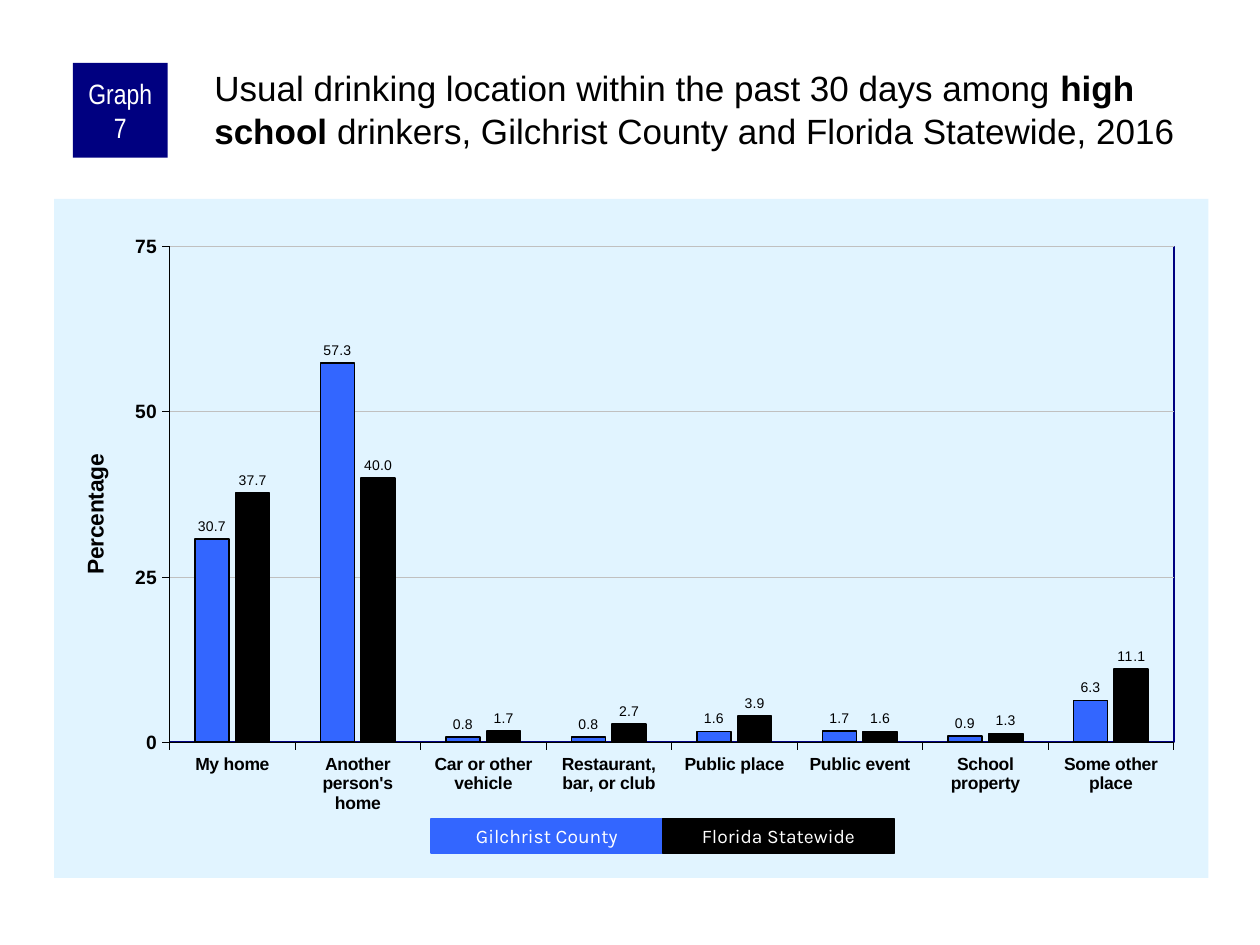
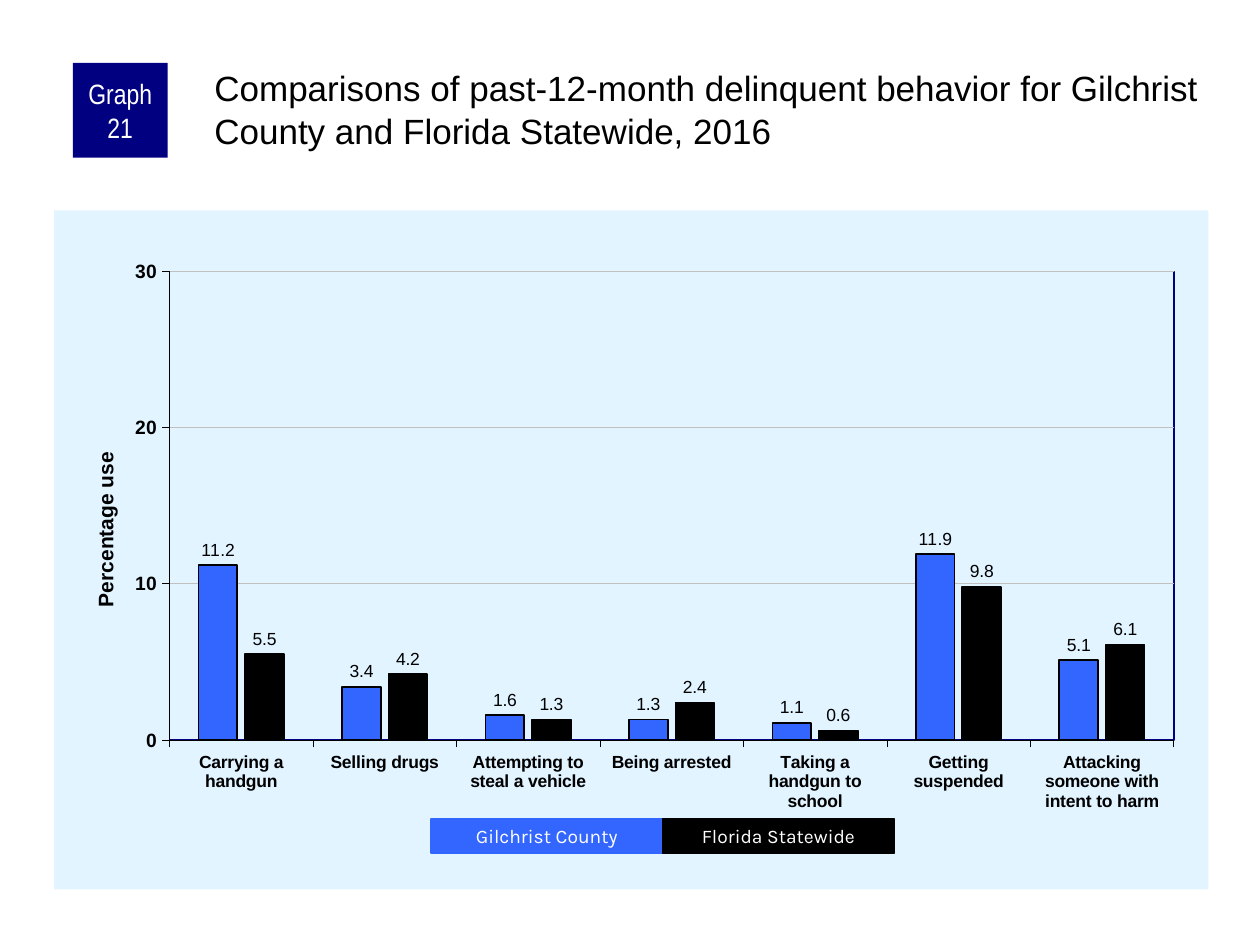
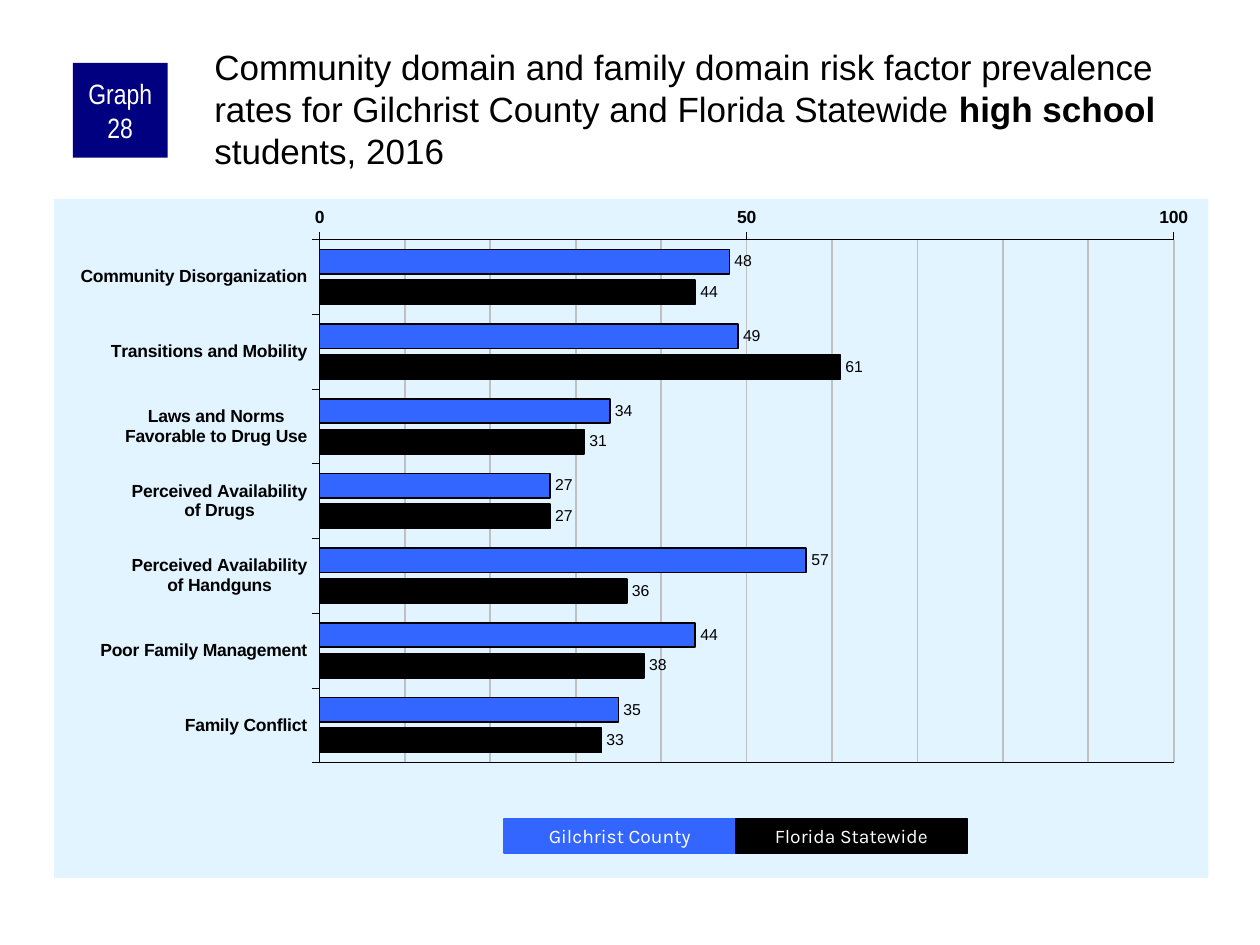
from copy import deepcopy

from pptx import Presentation
from pptx.chart.data import CategoryChartData
from pptx.dml.color import RGBColor
from pptx.enum.chart import (XL_AXIS_CROSSES, XL_CHART_TYPE, XL_LABEL_POSITION,
                             XL_TICK_MARK)
from pptx.enum.shapes import MSO_SHAPE
from pptx.enum.text import MSO_ANCHOR, MSO_AUTO_SIZE, PP_ALIGN
from pptx.oxml import parse_xml
from pptx.oxml.ns import nsdecls
from pptx.util import Cm, Pt

# Shared look
COLORS = {
    "text": "000000",
    "white": "FFFFFF",
    "badge": "000080",
    "panel": "E1F4FF",
    "county": "3366FF",
    "state": "000000",
    "grid": "C0C0C0",
}
REGIONS = [("Gilchrist County", "county"), ("Florida Statewide", "state")]
LEGEND_WIDTH = 4.67

# Content of each slide
GRAPHS = [
    {
        "number": 7,
        "title": [("Usual drinking location within the past 30 days among ", False),
                  ("high school", True),
                  (" drinkers, Gilchrist County and Florida Statewide, 2016", False)],
        "title_top": 1.27, "chart_top": 4.01, "legend_left": 8.69,
        "type": XL_CHART_TYPE.COLUMN_CLUSTERED,
        "categories": ["My home", "Another person's home", "Car or other vehicle",
                       "Restaurant, bar, or club", "Public place", "Public event",
                       "School property", "Some other place"],
        "values": [(30.7, 57.3, 0.8, 0.8, 1.6, 1.7, 0.9, 6.3),
                   (37.7, 40, 1.7, 2.7, 3.9, 1.6, 1.3, 11.1)],
        "maximum": 75, "step": 25, "axis_size": 11, "grid_width": 0.25,
        "axis_title": ("Percentage", 13, 0.02, 0.37),
        "label_format": "0.0", "label_size": 8, "gap": 150, "overlap": -20,
        "plot": (0.1, 0.07, 0.87, 0.73), "frame": ("badge", 1),
    },
    {
        "number": 21,
        "title": [("Comparisons of past-12-month delinquent behavior for Gilchrist "
                   "County and Florida Statewide, 2016", False)],
        "title_top": 1.27, "chart_top": 4.24, "legend_left": 8.69,
        "type": XL_CHART_TYPE.COLUMN_CLUSTERED,
        "categories": ["Carrying a handgun", "Selling drugs",
                       "Attempting to steal a vehicle", "Being arrested",
                       "Taking a handgun to school", "Getting suspended",
                       "Attacking someone with intent to harm"],
        "values": [(11.2, 3.4, 1.6, 1.3, 1.1, 11.9, 5.1),
                   (5.5, 4.2, 1.3, 2.4, 0.6, 9.8, 6.1)],
        "maximum": 30, "step": 10, "axis_size": 11, "grid_width": 0.25,
        "axis_title": ("Percentage use", 12, 0.03, 0.35),
        "label_format": "0.0", "label_size": 10, "gap": 150, "overlap": -20,
        "plot": (0.1, 0.09, 0.87, 0.69), "frame": ("badge", 1),
    },
    {
        "number": 28,
        "title": [("Community domain and family domain risk factor prevalence rates "
                   "for Gilchrist County and Florida Statewide ", False),
                  ("high school", True),
                  (" students, 2016", False)],
        "title_top": 0.84, "chart_top": 4.01, "legend_left": 10.16,
        "type": XL_CHART_TYPE.BAR_CLUSTERED,
        "categories": ["Community Disorganization", "Transitions and Mobility",
                       "Laws and Norms\nFavorable to Drug Use",
                       "Perceived Availability\nof Drugs",
                       "Perceived Availability\nof Handguns",
                       "Poor Family Management", "Family Conflict"],
        "values": [(48, 49, 34, 27, 57, 44, 35),
                   (44, 61, 31, 27, 36, 38, 33)],
        "maximum": 100, "step": 50, "minor_step": 10, "axis_size": 10, "grid_width": 1,
        "axis_title": None,
        "label_format": "0", "label_size": 9, "gap": 80, "overlap": -25,
        "plot": (0.23, 0.06, 0.74, 0.77), "frame": ("text", 0.25),
    },
]


def style_font(font, name, size, color, bold=False):
    font.name = name
    font.size = Pt(size)
    font.bold = bold
    font.color.rgb = RGBColor.from_string(COLORS[color])


def manual_layout(x, y, size=None):
    target = '<c:layoutTarget val="inner"/>' if size else ""
    extent = f'<c:w val="{size[0]}"/><c:h val="{size[1]}"/>' if size else ""
    return parse_xml(
        f'<c:layout {nsdecls("c")}><c:manualLayout>{target}'
        f'<c:xMode val="edge"/><c:yMode val="edge"/>'
        f'<c:x val="{x}"/><c:y val="{y}"/>{extent}</c:manualLayout></c:layout>')


presentation = Presentation()
presentation.slide_width = Cm(25.4)
presentation.slide_height = Cm(19.05)

for graph in GRAPHS:
    slide = presentation.slides.add_slide(presentation.slide_layouts[5])

    # Title
    title = slide.shapes.title
    title.left, title.top = Cm(4.24), Cm(graph["title_top"])
    title.width, title.height = Cm(20.12), Cm(2.11)
    text_frame = title.text_frame
    text_frame.auto_size = MSO_AUTO_SIZE.NONE
    text_frame.word_wrap = True
    text_frame.vertical_anchor = MSO_ANCHOR.TOP
    text_frame.margin_left = text_frame.margin_top = Cm(0.08)
    text_frame.margin_right = text_frame.margin_bottom = 0
    paragraph = text_frame.paragraphs[0]
    paragraph.alignment = PP_ALIGN.LEFT
    paragraph.line_spacing = Pt(24)
    for text, bold in graph["title"]:
        run = paragraph.add_run()
        run.text = text
        style_font(run.font, "Arial", 20, "text", bold)

    # Chart
    chart_data = CategoryChartData()
    chart_data.categories = graph["categories"]
    for (region, color), values in zip(REGIONS, graph["values"]):
        chart_data.add_series(region, values)
    chart = slide.shapes.add_chart(
        graph["type"], Cm(1.09), Cm(graph["chart_top"]), Cm(23.27), Cm(13.69),
        chart_data).chart
    chart.has_title = False
    chart.has_legend = False
    style_font(chart.font, "Arial", 11.5, "text")

    # Bars and value labels
    plot = chart.plots[0]
    plot.vary_by_categories = False
    plot.gap_width = graph["gap"]
    plot.overlap = graph["overlap"]
    for series, (region, color) in zip(plot.series, REGIONS):
        series.format.fill.solid()
        series.format.fill.fore_color.rgb = RGBColor.from_string(COLORS[color])
        series.format.line.color.rgb = RGBColor.from_string(COLORS["text"])
        series.format.line.width = Pt(1)
        labels = series.data_labels
        labels.show_value = True
        labels.position = XL_LABEL_POSITION.OUTSIDE_END
        labels.number_format = graph["label_format"]
        labels.number_format_is_linked = False
        style_font(labels.font, "Arial", graph["label_size"], "text")

    # Axes
    category_axis, value_axis = chart.category_axis, chart.value_axis
    for axis, size in ((category_axis, 10), (value_axis, graph["axis_size"])):
        axis.major_tick_mark = XL_TICK_MARK.OUTSIDE
        axis.minor_tick_mark = XL_TICK_MARK.NONE
        axis.format.line.color.rgb = RGBColor.from_string(COLORS["text"])
        axis.format.line.width = Pt(0.25)
        style_font(axis.tick_labels.font, "Arial", size, "text", True)
    value_axis.minimum_scale = 0
    value_axis.maximum_scale = graph["maximum"]
    value_axis.major_unit = graph["step"]
    value_axis.tick_labels.number_format = "0"
    value_axis.tick_labels.number_format_is_linked = False
    value_axis.has_major_gridlines = True
    grid_line = value_axis.major_gridlines.format.line
    grid_line.color.rgb = RGBColor.from_string(COLORS["grid"])
    grid_line.width = Pt(graph["grid_width"])
    if graph["type"] == XL_CHART_TYPE.BAR_CLUSTERED:
        category_axis.reverse_order = True
        category_axis.crosses = XL_AXIS_CROSSES.MAXIMUM
        value_axis.has_minor_gridlines = True
        value_axis.minor_unit = graph["minor_step"]
        axis_element = value_axis._element
        grid_style = axis_element.xpath("c:majorGridlines/c:spPr")[0]
        axis_element.xpath("c:minorGridlines")[0].append(deepcopy(grid_style))
    if graph["axis_title"]:
        text, size, x, y = graph["axis_title"]
        axis_title = value_axis.axis_title
        axis_title.text_frame.text = text
        style_font(axis_title.text_frame.paragraphs[0].runs[0].font,
                   "Arial", size, "text", True)
        title_element = axis_title._element
        for layout in title_element.xpath("c:layout"):
            title_element.remove(layout)
        title_element.xpath("c:tx")[0].addnext(manual_layout(x, y))

    # Plot position, plot frame and chart background
    chart_space = chart._chartSpace
    plot_area = chart_space.xpath("c:chart/c:plotArea")[0]
    for layout in plot_area.xpath("c:layout"):
        plot_area.remove(layout)
    x, y, width, height = graph["plot"]
    plot_area.insert(0, manual_layout(x, y, (width, height)))
    frame_color, frame_width = graph["frame"]
    plot_area.append(parse_xml(
        f'<c:spPr {nsdecls("c", "a")}><a:noFill/><a:ln w="{Pt(frame_width)}"><a:solidFill>'
        f'<a:srgbClr val="{COLORS[frame_color]}"/></a:solidFill></a:ln></c:spPr>'))
    chart_space.xpath("c:chart")[0].addnext(parse_xml(
        f'<c:spPr {nsdecls("c", "a")}><a:solidFill><a:srgbClr val="{COLORS["panel"]}"/>'
        f'</a:solidFill><a:ln><a:noFill/></a:ln></c:spPr>'))

    # Graph number badge and legend boxes
    boxes = [(f"Graph {graph['number']}", "badge", "Arial Narrow", 16,
              1.47, 1.27, 1.91, 1.91)]
    for index, (region, color) in enumerate(REGIONS):
        boxes.append((region, color, "Karla", 11,
                      graph["legend_left"] + index * LEGEND_WIDTH, 16.51,
                      LEGEND_WIDTH, 0.69))
    for text, color, font_name, size, left, top, width, height in boxes:
        shape = slide.shapes.add_shape(
            MSO_SHAPE.RECTANGLE, Cm(left), Cm(top), Cm(width), Cm(height))
        shape.shadow.inherit = False
        shape.fill.solid()
        shape.fill.fore_color.rgb = RGBColor.from_string(COLORS[color])
        if color == "badge":
            shape.line.fill.background()
        else:
            shape.line.color.rgb = RGBColor.from_string(COLORS[color])
            shape.line.width = Pt(0.75)
        text_frame = shape.text_frame
        text_frame.word_wrap = True
        text_frame.vertical_anchor = MSO_ANCHOR.MIDDLE
        text_frame.margin_left = text_frame.margin_right = Cm(0.13)
        text_frame.margin_top = text_frame.margin_bottom = 0
        text_frame.text = text
        paragraph = text_frame.paragraphs[0]
        paragraph.alignment = PP_ALIGN.CENTER
        style_font(paragraph.runs[0].font, font_name, size, "white")

presentation.save("out.pptx")
